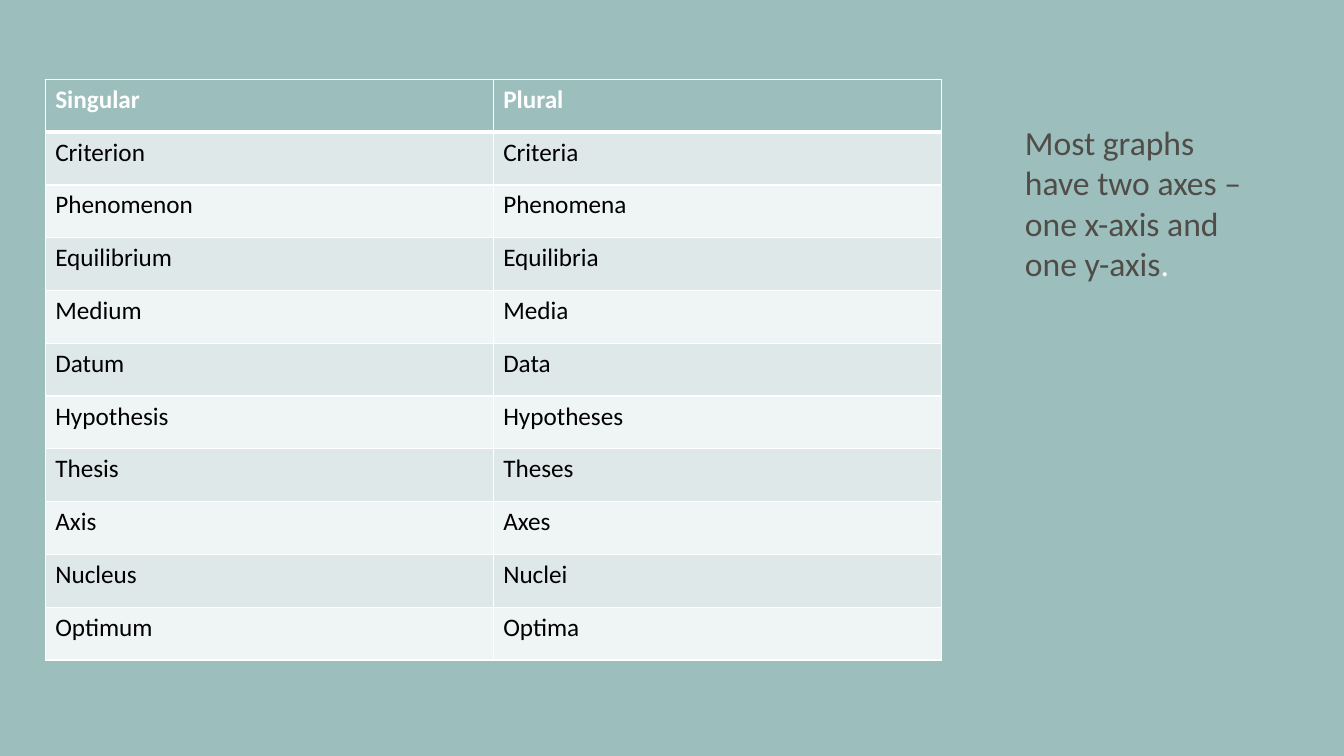
"""Build a slide listing irregular singular and plural nouns beside an example sentence."""
from typing import NamedTuple

from lxml.etree import SubElement
from pptx import Presentation
from pptx.dml.color import RGBColor
from pptx.enum.text import MSO_AUTO_SIZE
from pptx.oxml.ns import qn
from pptx.util import Cm, Pt

FONT = "Calibri"
TEAL, WHITE, BLACK, BROWN = "9CBEBD", "FFFFFF", "000000", "504D48"
BANDS = ("EFF4F4", "DEE8E8")
COL_WIDTH, ROW_HEIGHT = 11.29, 1.33


class Noun(NamedTuple):
    singular: str
    plural: str


NOUNS = [
    Noun("Singular", "Plural"),
    Noun("Criterion", "Criteria"),
    Noun("Phenomenon", "Phenomena"),
    Noun("Equilibrium", "Equilibria"),
    Noun("Medium", "Media"),
    Noun("Datum", "Data"),
    Noun("Hypothesis", "Hypotheses"),
    Noun("Thesis", "Theses"),
    Noun("Axis", "Axes"),
    Noun("Nucleus", "Nuclei"),
    Noun("Optimum", "Optima"),
]


def rgb(color: str) -> RGBColor:
    return RGBColor.from_string(color)


def add_border(cell, side: str, width: float) -> None:
    ln = SubElement(cell._tc.get_or_add_tcPr(), qn(f"a:ln{side}"), w=str(Pt(width)))
    SubElement(SubElement(ln, qn("a:solidFill")), qn("a:srgbClr"), val=WHITE)


def format_cell(cell, text: str, row: int) -> None:
    header = row == 0
    widths = {"L": 1, "R": 1, "T": 3 if row == 1 else 1, "B": 3 if header else 1}
    for side, width in widths.items():
        add_border(cell, side, width)
    cell.fill.solid()
    cell.fill.fore_color.rgb = rgb(TEAL if header else BANDS[row % 2])
    cell.text = text
    font = cell.text_frame.paragraphs[0].font
    font.name, font.size, font.bold = FONT, Pt(18), header
    font.color.rgb = rgb(WHITE if header else BLACK)


def add_noun_table(s, nouns: list[Noun]) -> None:
    rows, cols = len(nouns), len(Noun._fields)
    table = s.shapes.add_table(rows, cols, Cm(1.14), Cm(2), Cm(cols * COL_WIDTH),
                               Cm(rows * ROW_HEIGHT)).table
    for column in table.columns:
        column.width = Cm(COL_WIDTH)
    for row, noun in enumerate(nouns):
        table.rows[row].height = Cm(ROW_HEIGHT)
        for col, text in enumerate(noun):
            format_cell(table.cell(row, col), text, row)


def add_example(s) -> None:
    tf = s.shapes.add_textbox(Cm(25.58), Cm(2.95), Cm(5.97), Cm(4.37)).text_frame
    tf.word_wrap = True
    tf.auto_size = MSO_AUTO_SIZE.SHAPE_TO_FIT_TEXT
    p = tf.paragraphs[0]
    p.font.name, p.font.size = FONT, Pt(24)
    for text, color in (
        ("Most graphs have two axes – one x-axis and one y-axis", BROWN),
        (".", WHITE),
    ):
        r = p.add_run()
        r.text = text
        r.font.color.rgb = rgb(color)


def main() -> None:
    prs = Presentation()
    prs.slide_width, prs.slide_height = Cm(33.87), Cm(19.05)
    s = prs.slides.add_slide(prs.slide_layouts[6])
    s.background.fill.solid()
    s.background.fill.fore_color.rgb = rgb(TEAL)
    add_noun_table(s, NOUNS)
    add_example(s)
    prs.save("out.pptx")


if __name__ == "__main__":
    main()
